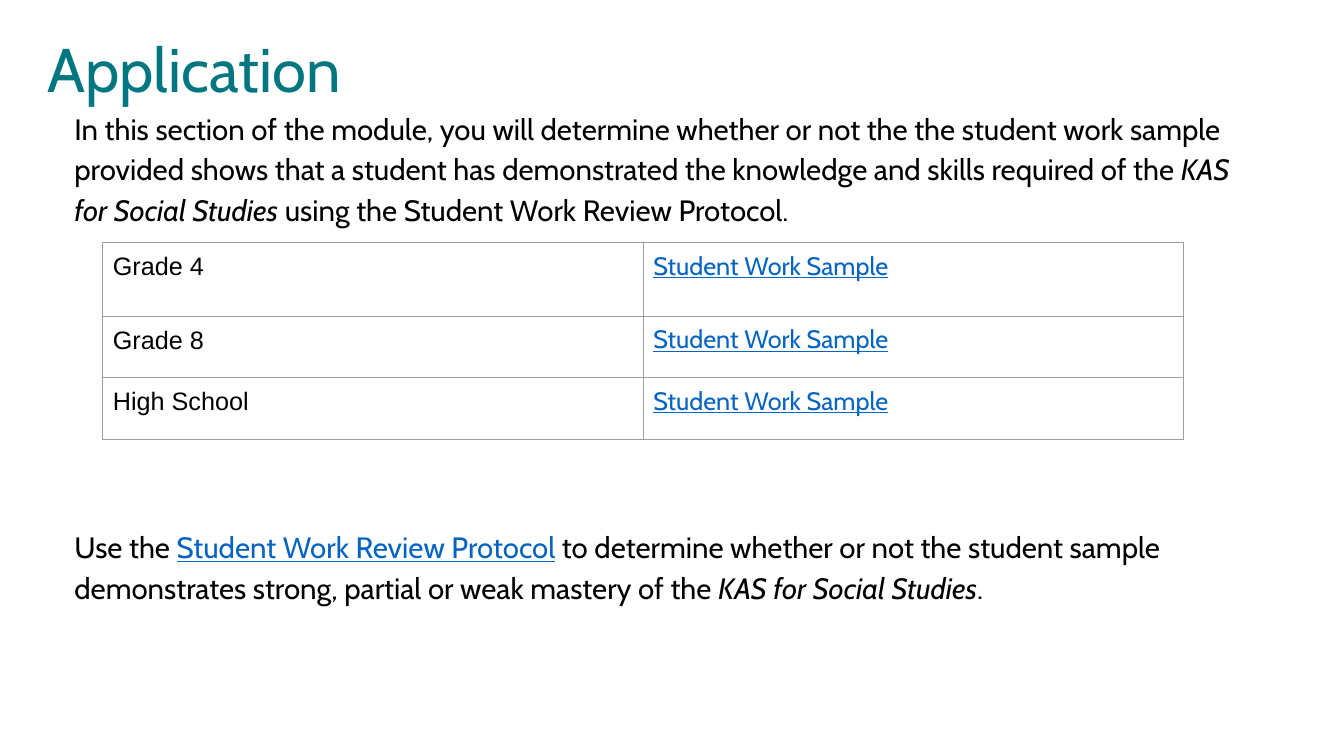
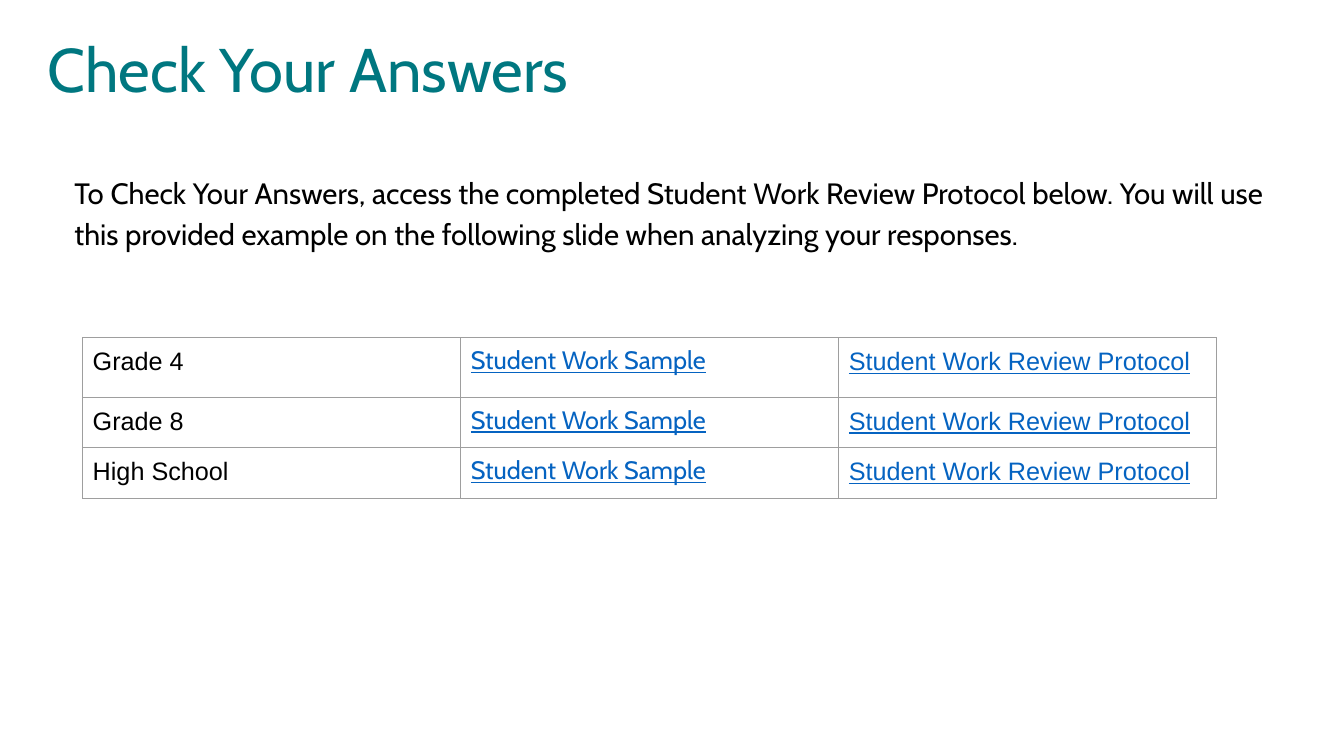
from lxml import etree
from pptx import Presentation
from pptx.dml.color import RGBColor
from pptx.enum.text import MSO_ANCHOR
from pptx.oxml.ns import qn
from pptx.util import Inches, Pt

TEAL = RGBColor(0x00, 0x77, 0x80)
BLACK = RGBColor(0x00, 0x00, 0x00)
BLUE = RGBColor(0x05, 0x63, 0xC1)
GRAY = RGBColor(0x9E, 0x9E, 0x9E)
MIDDLE = MSO_ANCHOR.MIDDLE
TOP = MSO_ANCHOR.TOP
HEAD = "Cabin"
PLAIN = "Arial"

deck = Presentation()
deck.slide_width = Inches(13.33)
deck.slide_height = Inches(7.5)
COL = deck.slide_width / 100
ROW = deck.slide_height / 100
PAD = Inches(0.1)
EDGE = Pt(0.75)


def put(para, text, font=HEAD, size=21, color=BLACK, italic=False, link=False):
    run = para.add_run()
    run.text = text
    run.font.name = font
    run.font.size = Pt(size)
    run.font.color.rgb = BLUE if link else color
    run.font.italic = italic
    run.font.underline = link


def box(slide, left, top, wide, high, anchor=TOP, space=1.15):
    shape = slide.shapes.add_textbox(
        int(left * COL), int(top * ROW), int(wide * COL), int(high * ROW))
    frame = shape.text_frame
    frame.word_wrap = True
    frame.vertical_anchor = anchor
    para = frame.paragraphs[0]
    para.line_spacing = space
    return para


KAS = {"italic": True}
LINK = {"link": True}
GRADES = ["Grade 4", "Grade 8", "High School"]
SAMPLE = ("Student Work Sample", HEAD, 0.9)
REVIEW = ("Student Work Review Protocol", PLAIN, 1.0)

pages = [
    {
        "title": "Application",
        "body": [
            (13.33, 18, [
                ("In this section of the module, you will determine whether or not "
                 "the the student work sample provided shows that a student has "
                 "demonstrated the knowledge and skills required of the ", {}),
                ("KAS for Social Studies ", KAS),
                ("using the Student Work Review Protocol.", {}),
            ]),
            (68.67, 12, [
                ("Use the ", {}),
                ("Student Work Review Protocol", LINK),
                (" to determine whether or not the student sample demonstrates "
                 "strong, partial or weak mastery of the ", {}),
                ("KAS for Social Studies", KAS),
                (".", {}),
            ]),
        ],
        "place": (7.65, 32.13),
        "wide": 40.21,
        "rows": [9.73, 8.13, 8.13],
        "links": [SAMPLE],
    },
    {
        "title": "Check Your Answers",
        "body": [
            (21.87, 12, [
                ("To Check Your Answers, access the completed Student Work Review "
                 "Protocol below. You will use this provided example on the "
                 "following slide when analyzing your responses.", {}),
            ]),
        ],
        "place": (6.15, 44.67),
        "wide": 28.13,
        "rows": [7.87, 6.45, 6.45],
        "links": [SAMPLE, REVIEW],
    },
]

for page in pages:
    slide = deck.slides.add_slide(deck.slide_layouts[6])
    title = box(slide, 2.78, 0, 86.27, 19.33, MIDDLE, 0.9)
    put(title, page["title"], size=44, color=TEAL)

    for top, high, parts in page["body"]:
        para = box(slide, 4.8, top, 90, high)
        for text, style in parts:
            put(para, text, **style)

    left, top = page["place"]
    count = len(page["links"]) + 1
    table = slide.shapes.add_table(
        len(GRADES), count, int(left * COL), int(top * ROW),
        int(page["wide"] * count * COL), int(sum(page["rows"]) * ROW)).table
    table.first_row = False
    table.horz_banding = False
    for column in table.columns:
        column.width = int(page["wide"] * COL)

    for r, grade in enumerate(GRADES):
        table.rows[r].height = int(page["rows"][r] * ROW)
        for c, (text, font, space) in enumerate([(grade, PLAIN, 1.0)] + page["links"]):
            cell = table.cell(r, c)
            cell.margin_left = cell.margin_right = PAD
            cell.margin_top = cell.margin_bottom = PAD
            para = cell.text_frame.paragraphs[0]
            para.line_spacing = space
            put(para, text, font=font, size=18, link=c > 0)
            props = cell._tc.get_or_add_tcPr()
            for side in ("a:lnL", "a:lnR", "a:lnT", "a:lnB"):
                line = etree.SubElement(props, qn(side), w=str(EDGE))
                fill = etree.SubElement(line, qn("a:solidFill"))
                etree.SubElement(fill, qn("a:srgbClr"), val=str(GRAY))
            cell.fill.background()

deck.save("out.pptx")
